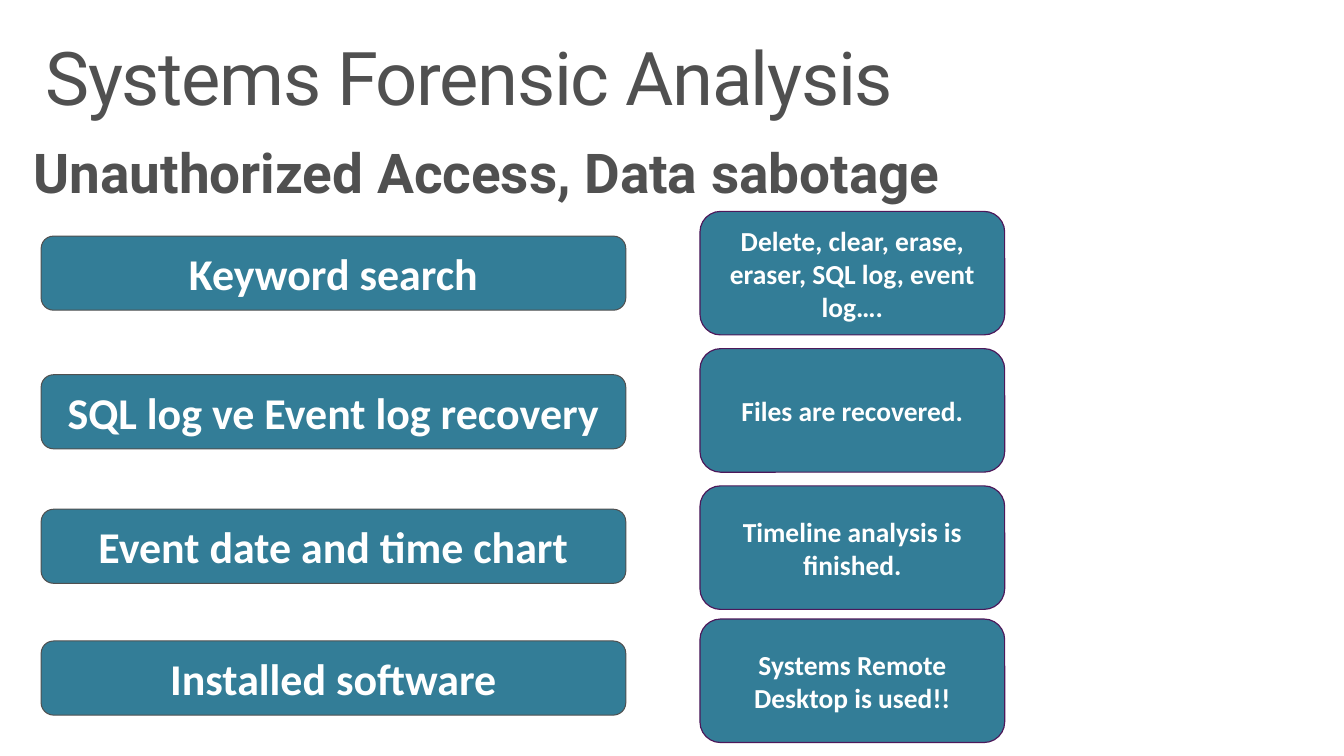
import pptx
import pptx.util
import pptx.dml.color
import pptx.enum.shapes
import pptx.enum.text

Pt = pptx.util.Pt
KIND = pptx.enum.shapes.MSO_SHAPE
ALIGN = pptx.enum.text.PP_ALIGN
ANCHOR = pptx.enum.text.MSO_ANCHOR

# Content
TITLE = "Systems Forensic Analysis"
TOPIC = "Unauthorized Access, Data sabotage"
# Each row: step, its top, finding, its top
ROWS = [
    ("Keyword search", 172,
     "Delete, clear, erase, eraser, SQL log, event log….", 154),
    ("SQL log ve Event log recovery", 273, "Files are recovered.", 254),
    ("Event date and time chart", 371, "Timeline analysis is finished.", 354),
    ("Installed software", 467, "Systems Remote Desktop is used!!", 451),
]
COLORS = {"gray": "505050", "teal": "337D97", "plum": "4D185A",
          "white": "FFFFFF"}

# Column styles
STEP = dict(kind=KIND.FLOWCHART_ALTERNATE_PROCESS, left=30, width=426,
            height=54, edge="gray", weight=0.75, size=32)
FINDING = dict(kind=KIND.ROUNDED_RECTANGLE, left=510, width=222,
               height=90, edge="plum", weight=0.85, size=20)


def color(name):
    return pptx.dml.color.RGBColor.from_string(COLORS[name])


def write(frame, text, font, size, tint, bold):
    frame.word_wrap = True
    run = frame.paragraphs[0].add_run()
    run.text = text
    run.font.name = font
    run.font.size = Pt(size)
    run.font.bold = bold
    run.font.color.rgb = color(tint)
    return run


def add_head(slide, text, box, size, bold, anchor):
    frame = slide.shapes.add_textbox(*map(Pt, box)).text_frame
    frame.margin_left = frame.margin_right = Pt(11.5)
    frame.margin_top = frame.margin_bottom = Pt(7.2)
    frame.vertical_anchor = anchor
    run = write(frame, text, "Roboto", size, "gray", bold)
    frame.paragraphs[0].line_spacing = 0.9
    return run


def add_card(slide, text, top, style):
    card = slide.shapes.add_shape(
        style["kind"], Pt(style["left"]), Pt(top),
        Pt(style["width"]), Pt(style["height"]))
    card.shadow.inherit = False
    card.fill.solid()
    card.fill.fore_color.rgb = color("teal")
    card.line.color.rgb = color(style["edge"])
    card.line.width = Pt(style["weight"])
    frame = card.text_frame
    frame.vertical_anchor = ANCHOR.MIDDLE
    write(frame, text, "Calibri", style["size"], "white", True)
    frame.paragraphs[0].alignment = ALIGN.CENTER


def main():
    deck = pptx.Presentation()
    deck.slide_width, deck.slide_height = Pt(979.2), Pt(550.8)
    slide = deck.slides.add_slide(deck.slide_layouts[6])

    # Headings, the title with tighter letters
    title = add_head(slide, TITLE, (21.6, 23, 882.7, 72), 54, False,
                     ANCHOR.TOP)
    title.font._element.set("spc", "-100")
    add_head(slide, TOPIC, (13, 99.4, 835.2, 58.3), 40, True, ANCHOR.TOP)

    # Steps and findings
    for step, step_top, finding, find_top in ROWS:
        add_card(slide, step, step_top, STEP)
        add_card(slide, finding, find_top, FINDING)

    deck.save("out.pptx")


if __name__ == "__main__":
    main()
